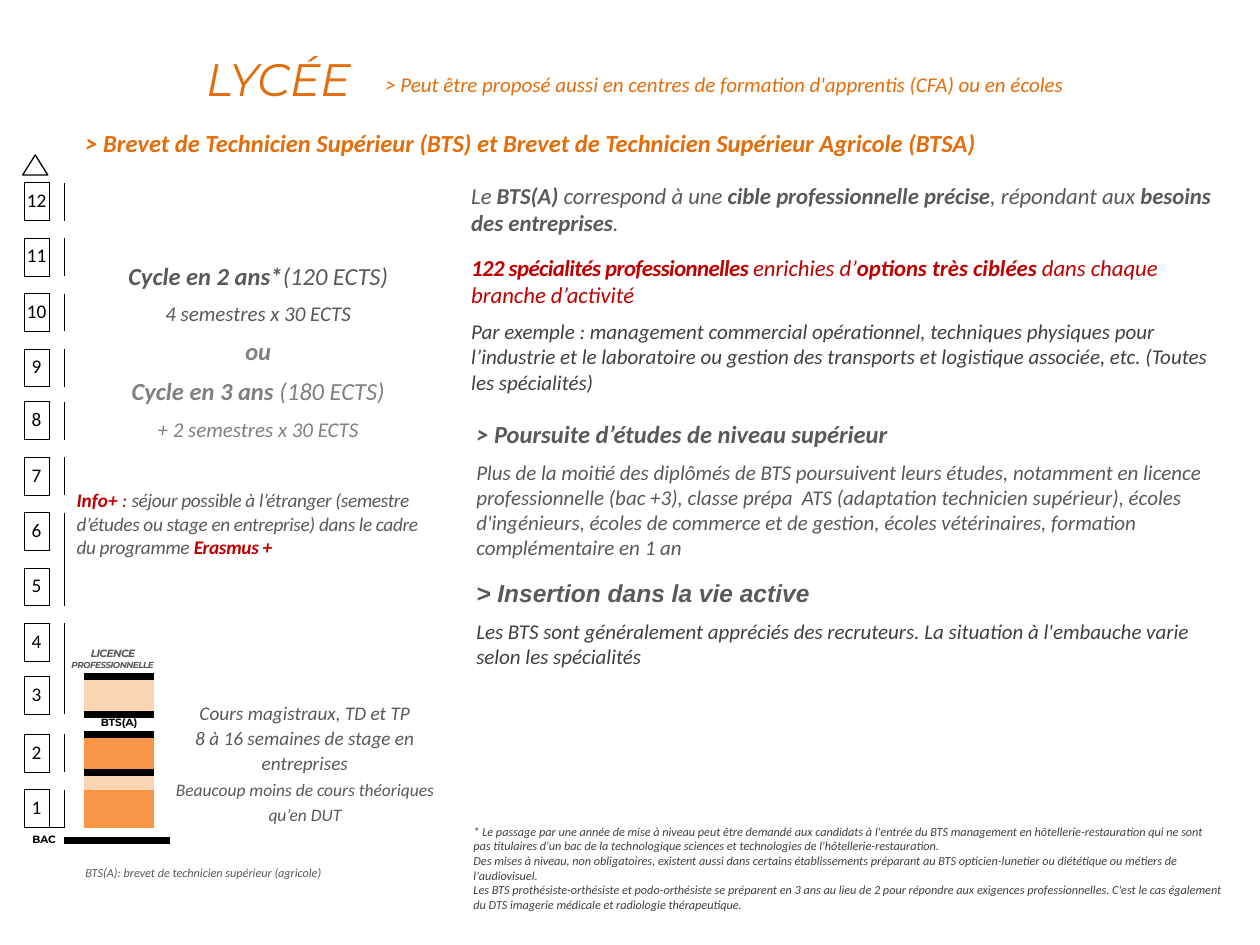
"""Builds the BTS slide: a scale of semesters beside notes on the course."""
from lxml.etree import SubElement
from pptx import Presentation
from pptx.dml.color import RGBColor
from pptx.enum.shapes import MSO_SHAPE
from pptx.enum.text import MSO_ANCHOR, MSO_AUTO_SIZE, PP_ALIGN
from pptx.oxml.ns import qn
from pptx.util import Inches, Pt

INK = {"black": "000000", "dark": "404040", "gray": "595959", "pale": "808080",
       "title": "E46C0A", "red": "C00000", "full": "F79646", "light": "FCD5B5"}
COLS = [0.2, 0.12, 0.16, 0.55, 0.06, 0.07]
GAPS = {8: 0.12, 18: 0.12, 20: 0.16}
BARS = {19: "light", 21: "full", 22: "light", 23: "full"}
TOP = 12
BASE = 2 * TOP
NO_STYLE = "{2D5ABB26-0587-4C30-8999-92F81FD0307C}"


def color(name):
    """Return a named colour."""
    return RGBColor.from_string(INK[name])


def put(para, text, size=12, ink="gray", font="Calibri", italic=True, track=0):
    """Add text to a paragraph; a bar switches bold on and off."""
    for i, part in enumerate(text.split("|")):
        if part:
            run = para.add_run()
            run.text = part
            run.font.size = Pt(size)
            run.font.name = font
            run.font.bold = i % 2 == 1
            run.font.italic = italic
            run.font.color.rgb = color(ink)
            if track:
                run.font._element.set("spc", str(track))
    return para


def line(frame, text, mid=False, before=0, after=0, lead=None, **fmt):
    """Add a paragraph to a frame."""
    para = frame.paragraphs[0]
    if para.runs:
        para = frame.add_paragraph()
    para.alignment = PP_ALIGN.CENTER if mid else PP_ALIGN.LEFT
    para.space_before, para.space_after = Pt(before), Pt(after)
    if lead:
        para.line_spacing = Pt(lead)
    return put(para, text, **fmt)


def box(slide, left, top, width, height, side=0.1, wrap=True):
    """Add a text box and return its frame."""
    frame = slide.shapes.add_textbox(
        Inches(left), Inches(top), Inches(width), Inches(height)).text_frame
    frame.margin_left = frame.margin_right = Inches(side)
    frame.word_wrap = wrap
    frame.auto_size = MSO_AUTO_SIZE.SHAPE_TO_FIT_TEXT
    return frame


def edge(cell, sides, width=0.5):
    """Draw the named sides of a cell, given in the order LRTB."""
    props = cell._tc.get_or_add_tcPr()
    for side in sides:
        ln = SubElement(props, qn("a:ln" + side), w=str(Pt(width)))
        fill = SubElement(ln, qn("a:solidFill"))
        SubElement(fill, qn("a:srgbClr"), val=INK["black"])


def label(cell, text, top=0, bottom=0, anchor=MSO_ANCHOR.BOTTOM, **fmt):
    """Write centred text in a cell."""
    cell.margin_top, cell.margin_bottom = Inches(top), Inches(bottom)
    cell.vertical_anchor = anchor
    return line(cell.text_frame, text, mid=True, **fmt)


def blank(cell):
    """Empty a cell so that its row can be low."""
    cell.margin_left = cell.margin_right = 0
    cell.margin_top = cell.margin_bottom = 0
    SubElement(cell.text_frame.paragraphs[0]._p, qn("a:endParaRPr"), sz="100")


def rule(grid, row, cols):
    """Draw a thick line under a row."""
    for col in cols:
        edge(grid.cell(row, col), "B", 4.5)
        edge(grid.cell(row + 1, col), "T", 4.5)


def tint(grid):
    """Fill the bars and clear the other cells."""
    for cell in grid.iter_cells():
        cell.fill.background()
    for row, ink in BARS.items():
        fill = grid.cell(row, 3).fill
        fill.solid()
        fill.fore_color.rgb = color(ink)


def scale(slide):
    """Add the table of semesters with its bars."""
    rows = [0.3 if r % 2 or r == 0 else GAPS.get(r, 0.14) for r in range(BASE)]
    rows += [0.1, 0.1]
    grid = slide.shapes.add_table(
        len(rows), len(COLS), Inches(0.19), Inches(1.15),
        Inches(sum(COLS)), Inches(sum(rows))).table
    grid._tbl.tblPr[0].text = NO_STYLE
    grid.first_row = grid.horz_banding = False
    for col, size in zip(grid.columns, COLS):
        col.width = Inches(size)
    for row, size in zip(grid.rows, rows):
        row.height = Inches(size)
    for cell in grid.iter_cells():
        blank(cell)
    for first, last in (((13, 2), (14, 2)), ((17, 2), (18, 4)),
                        ((BASE, 0), (BASE + 1, 1))):
        grid.cell(*first).merge(grid.cell(*last))
    for row in range(BASE + 1):
        cell = grid.cell(row, 0)
        if row % 2:
            edge(cell, "LRTB")
            edge(grid.cell(row, 1), "L")
            label(cell, str(TOP - row // 2), 0.05, 0.05, MSO_ANCHOR.TOP,
                  size=11, ink="black", italic=False)
        else:
            edge(cell, "B" if row == 0 else "T" if row == BASE else "TB")
    edge(grid.cell(19, 3), "T", 4.5)
    rule(grid, 20, [3])
    rule(grid, BASE, range(2, 6))
    tint(grid)
    small = dict(size=6, font="Montserrat")
    para = label(grid.cell(17, 2), "|LICENCE |", bottom=0.04, track=-30, **small)
    put(para, "|PROFESSIONNELLE|", size=5, font="Montserrat", track=-30)
    label(grid.cell(20, 3), "|BTS(A)|", 0.02, 0.04, ink="black", italic=False, **small)
    label(grid.cell(BASE, 0), "|BAC|", anchor=MSO_ANCHOR.MIDDLE,
          ink="black", italic=False, **small)


def arrow(slide):
    """Add the triangle on top of the scale."""
    tip = slide.shapes.add_shape(MSO_SHAPE.ISOSCELES_TRIANGLE, Inches(0.18),
                                 Inches(1.23), Inches(0.2), Inches(0.16))
    tip.shadow.inherit = False
    tip.fill.background()
    tip.line.color.rgb = color("black")
    tip.line.width = Pt(0.75)


def heads(slide):
    """Add the titles."""
    line(box(slide, 1.46, 0.36, 1.5, 0.54), "LYCÉE", mid=True,
         size=26, font="Montserrat", ink="title")
    line(box(slide, 0.58, 0.97, 8.59, 0.34), "|> Brevet de Technicien Supérieur (BTS) "
         "et Brevet de Technicien Supérieur Agricole (BTSA)|", after=6, size=14, ink="title")
    line(box(slide, 2.96, 0.52, 6.77, 0.3), "> Peut être proposé aussi en centres de "
         "formation d'apprentis (CFA) ou en écoles", after=6, ink="title")


def left(slide):
    """Add the texts of the left half."""
    line(box(slide, 0.58, 6.82, 2.33, 0.22, wrap=False),
         "BTS(A): brevet de technicien supérieur (agricole)", size=7)
    frame = box(slide, 0.75, 2.02, 2.6, 1.58, side=0.04)
    for text, size, ink in (("|Cycle en 2 ans*|(120 ECTS)", 14, "gray"),
                            ("4 semestres x 30 ECTS", 12, "gray"),
                            ("|ou|", 14, "pale"),
                            ("|Cycle en 3 ans| (180 ECTS)", 14, "pale"),
                            ("+ 2 semestres x 30 ECTS", 12, "pale")):
        line(frame, text, mid=True, after=6, size=size, ink=ink)
    para = line(box(slide, 0.51, 3.83, 3.07, 0.66), "|Info+| : ", size=11, ink="red")
    put(para, "séjour possible à l’étranger (semestre d’études ou stage en entreprise) "
        "dans le cadre du programme ", size=11, track=-20)
    put(para, "|Erasmus +|", size=11, ink="red", track=-20)
    frame = box(slide, 1.22, 5.5, 2.4, 1.08)
    para = line(frame, "Cours magistraux, TD et TP", mid=True, lead=14.4, size=11)
    para.add_line_break()
    put(para, "8 à 16 semaines de stage en entreprises", size=11)
    line(frame, "Beaucoup moins de cours théoriques qu’en DUT", mid=True, lead=14.4, size=10)


def right(slide):
    """Add the texts of the right half."""
    frame = box(slide, 3.74, 1.39, 6.06, 1.81, side=0)
    line(frame, "Le |BTS(A) |correspond à une |cible professionnelle précise|, "
         "répondant aux |besoins des entreprises|.", after=10, size=13)
    para = line(frame, "|122 spécialités professionnelles |", after=6,
                size=13, ink="red", track=-30)
    put(para, "enrichies d’|options très ciblées |dans chaque branche d’activité",
        size=13, ink="red")
    line(frame, "Par exemple : management commercial opérationnel, techniques physiques "
         "pour l’industrie et le laboratoire ou gestion des transports et logistique "
         "associée, etc. (Toutes les spécialités)", after=6, ink="dark")
    frame = box(slide, 3.74, 3.28, 6.06, 1.23, side=0.04)
    line(frame, "|> Poursuite d’études de niveau supérieur|", size=14)
    line(frame, "Plus de la moitié des diplômés de BTS poursuivent leurs études, notamment "
         "en licence professionnelle (bac +3), classe prépa  ATS (adaptation technicien "
         "supérieur), écoles d'ingénieurs, écoles de commerce et de gestion, écoles "
         "vétérinaires, formation complémentaire en 1 an", before=6)
    frame = box(slide, 3.74, 4.54, 6.06, 0.81, side=0.04)
    line(frame, "|> Insertion dans la vie active|", size=14, font="Arial")
    line(frame, "Les BTS sont généralement appréciés des recruteurs. La situation à "
         "l'embauche varie selon les spécialités", before=6, after=6, lead=14.4, ink="dark")
    frame = box(slide, 3.66, 6.49, 6.14, 0.81)
    for text in (
            "* Le passage par une année de mise à niveau peut être demandé aux candidats à "
            "l'entrée du BTS management en hôtellerie-restauration qui ne sont pas titulaires "
            "d'un bac de la technologique sciences et technologies de l'hôtellerie-restauration.",
            "Des mises à niveau, non obligatoires, existent aussi dans certains établissements "
            "préparant au BTS opticien-lunetier ou diététique ou métiers de l'audiovisuel.",
            "Les BTS prothésiste-orthésiste et podo-orthésiste se préparent en 3 ans au lieu de "
            "2 pour répondre aux exigences professionnelles. C'est le cas également du DTS "
            "imagerie médicale et radiologie thérapeutique."):
        line(frame, text, size=7, ink="dark")


def main():
    """Build and save the deck."""
    deck = Presentation()
    deck.slide_width, deck.slide_height = Inches(10), Inches(7.5)
    slide = deck.slides.add_slide(deck.slide_layouts[6])
    for step in (scale, arrow, heads, left, right):
        step(slide)
    deck.save("out.pptx")


if __name__ == "__main__":
    main()
